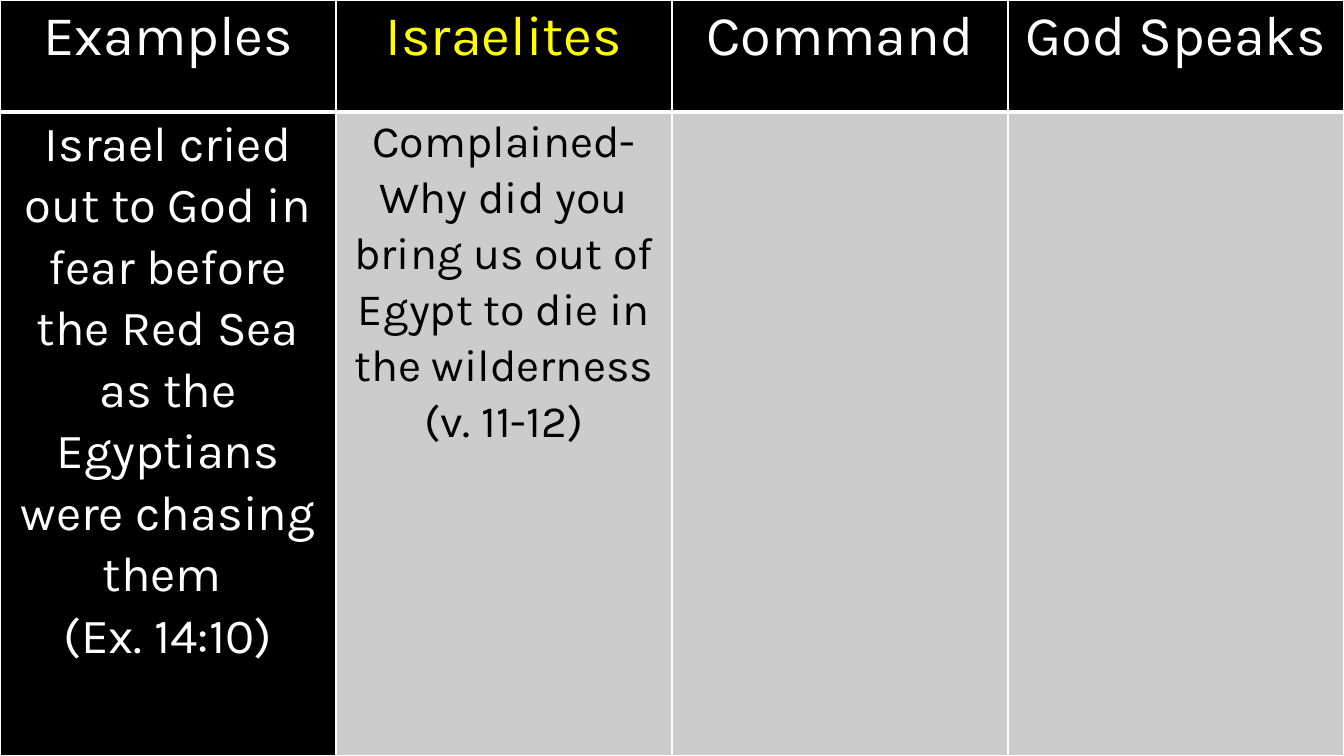
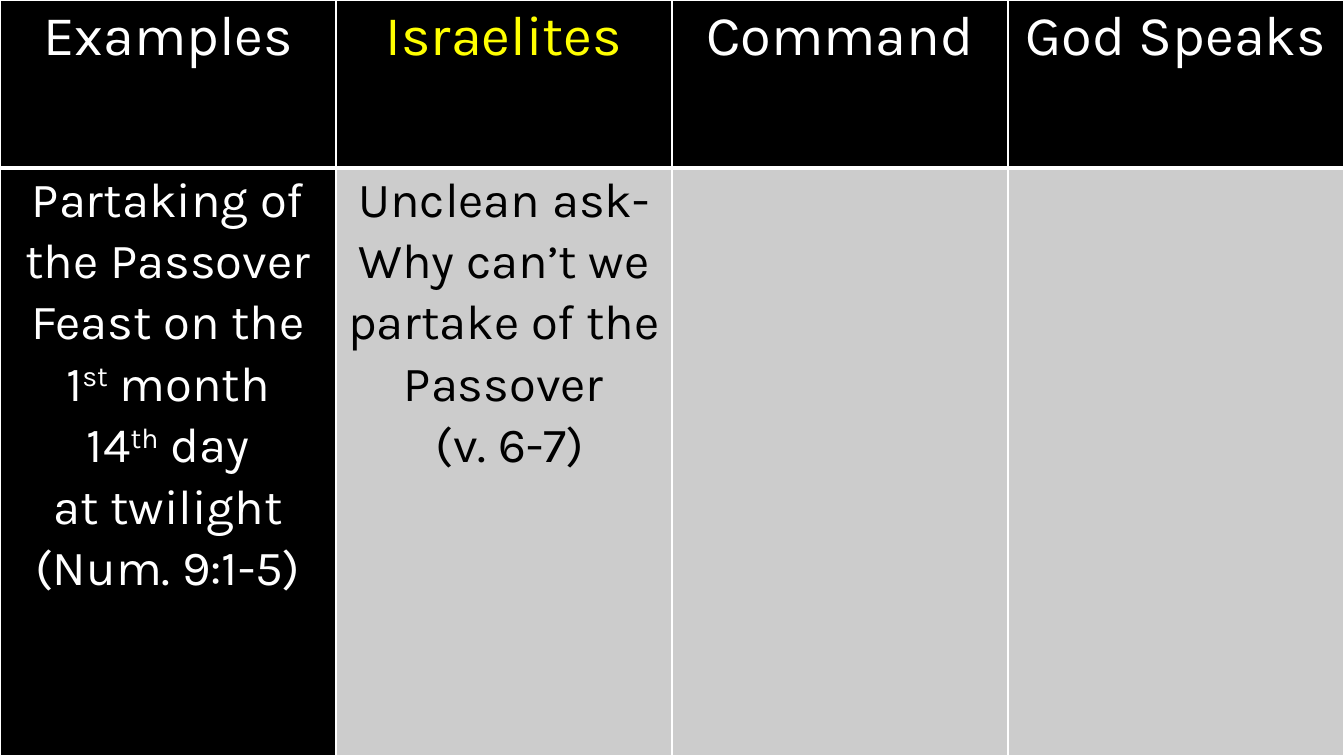
import dataclasses

import pptx
import pptx.dml.color
import pptx.enum.text
import pptx.oxml
import pptx.oxml.ns
import pptx.util

WIDE, HIGH = 1280, 720
HEADS = ["Examples", "Israelites", "Command", "God Speaks"]
FOCUS = 1  # column whose heading is picked out


@dataclasses.dataclass(frozen=True)
class Theme:
    font: str = "Karla"
    black: str = "000000"
    white: str = "FFFFFF"
    yellow: str = "FFFF00"
    grey: str = "CCCCCC"
    head: int = 40
    body: int = 35
    small: int = 32
    leading: float = 1.07
    inset: int = 7
    thin: int = 1
    thick: int = 3


THEME = Theme()


def px(n):
    return pptx.util.Emu(n * 9525)


def rgb(code):
    return pptx.dml.color.RGBColor.from_string(code)


def rule(cell, **widths):
    """Draw cell borders; keys are L, R, T and B, values are points."""
    props = cell._tc.get_or_add_tcPr()
    for side, width in widths.items():
        props.append(pptx.oxml.parse_xml(
            f'<a:ln{side} {pptx.oxml.ns.nsdecls("a")} w="{pptx.util.Pt(width)}">'
            f'<a:solidFill><a:srgbClr val="{THEME.white}"/></a:solidFill>'
            f'</a:ln{side}>'))


def write(cell, lines, size, color):
    """Fill a cell with centred lines; text between carets is raised."""
    frame = cell.text_frame
    frame.text = "\n".join(line.replace("^", "") for line in lines)
    for para, line in zip(frame.paragraphs, lines):
        para.alignment = pptx.enum.text.PP_ALIGN.CENTER
        para.line_spacing = THEME.leading
        parts = line.split("^")
        for part in parts[1:]:
            para.add_run()
        for i, (run, part) in enumerate(zip(para.runs, parts)):
            run.text = part
            font = run.font
            font.name, font.size, font.bold = THEME.font, pptx.util.Pt(size), False
            font.color.rgb = rgb(color)
            if i % 2:
                font._element.set("baseline", "30000")


def style(cell, fill, top, bottom):
    cell.margin_left = cell.margin_right = px(THEME.inset)
    cell.margin_top = cell.margin_bottom = 0
    rule(cell, L=THEME.thin, R=THEME.thin, T=top, B=bottom)
    cell.fill.solid()
    cell.fill.fore_color.rgb = rgb(fill)


def add_grid(deck, split, example, reply, size):
    """Add a slide whose table has a heading row of height split."""
    slide = deck.slides.add_slide(deck.slide_layouts[6])
    count = len(HEADS)
    grid = slide.shapes.add_table(2, count, 0, 0, px(WIDE), px(HIGH)).table
    grid.first_row = grid.horz_banding = False
    for row, height in zip(grid.rows, (split, HIGH - split)):
        row.height = px(height)
    for col, head in enumerate(HEADS):
        grid.columns[col].width = px(WIDE // count)
        top, low = grid.cell(0, col), grid.cell(1, col)
        style(top, THEME.black, THEME.thin, THEME.thick)
        style(low, THEME.grey if col else THEME.black, THEME.thick, THEME.thin)
        write(top, [head], THEME.head,
              THEME.yellow if col == FOCUS else THEME.white)
    write(grid.cell(1, 0), example, THEME.body, THEME.white)
    write(grid.cell(1, FOCUS), reply, size, THEME.black)


def main():
    deck = pptx.Presentation()
    deck.slide_width, deck.slide_height = px(WIDE), px(HIGH)
    back = deck.slide_master.background.fill
    back.solid()
    back.fore_color.rgb = rgb(THEME.black)
    add_grid(
        deck, 107,
        ["Israel cried out to God in fear before the Red Sea as the Egyptians",
         "were chasing them ", "(Ex. 14:10)"],
        ["Complained- Why did you bring us out of Egypt to die in the wilderness",
         "(v. 11-12)"],
        THEME.small)
    add_grid(
        deck, 160,
        ["Partaking of the Passover Feast on the 1^st^ month",
         "14^th^ day", "at twilight", "(Num. 9:1-5)"],
        ["Unclean ask- Why can’t we partake of the Passover", " (v. 6-7)"],
        THEME.body)
    deck.save("out.pptx")


if __name__ == "__main__":
    main()
